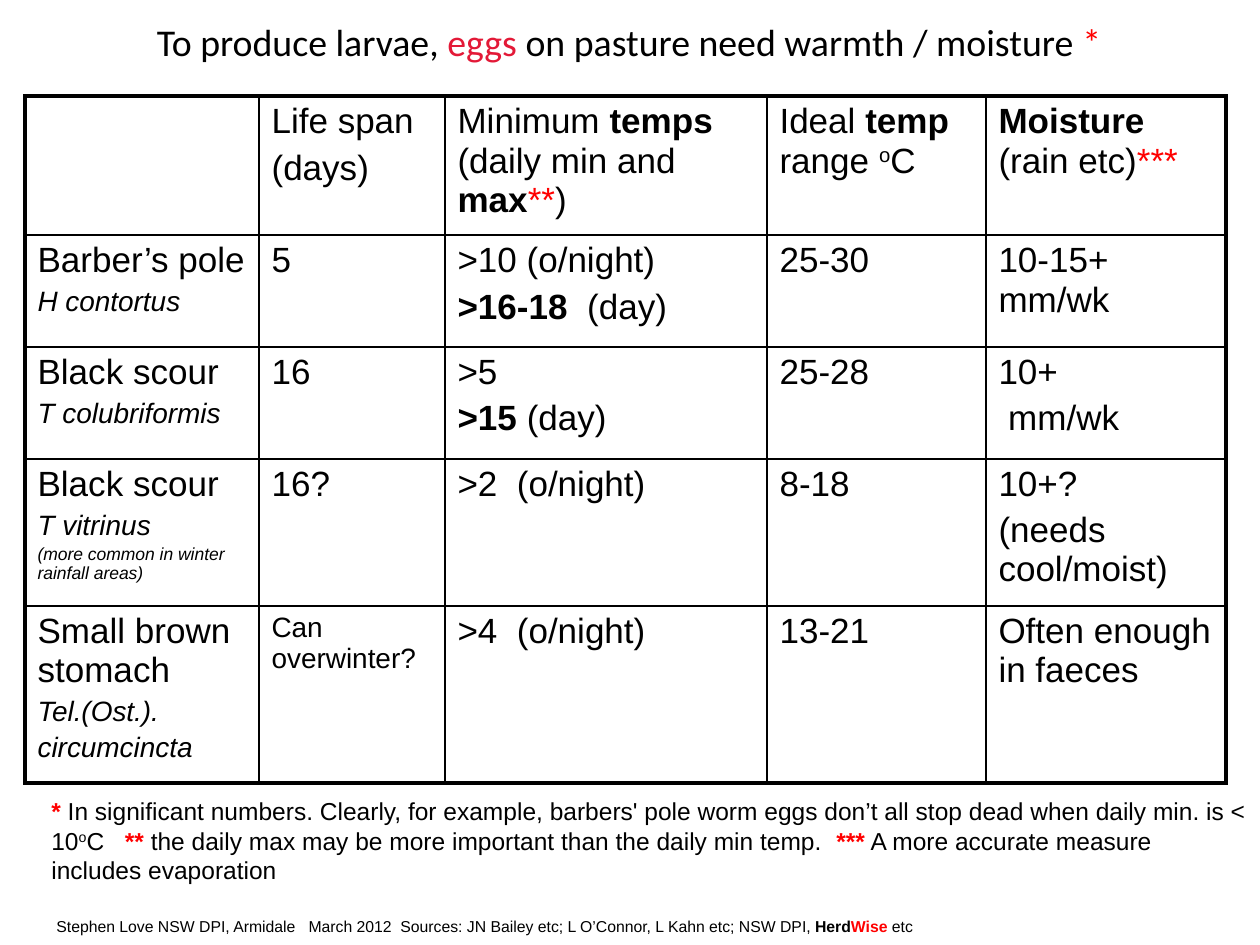
from lxml.etree import SubElement
from pptx import Presentation
from pptx.dml.color import RGBColor
from pptx.enum.text import MSO_ANCHOR as Anchor, PP_ALIGN as Align
from pptx.oxml.ns import qn
from pptx.util import Emu, Pt

EMU_PER_PX = 914400 / 126
BLACK, RED, CRIMSON = "000000", "FF0000", "E31937"

COLUMNS = [234, 186, 322, 219, 240]
ROWS = [139, 112, 112, 147, 177]

# A span is plain text or (text, options); a paragraph is (spans, options).
BOLD = {"bold": True}
RED_TEXT = {"color": RED}
RED_BOLD = {"color": RED, "bold": True}
RAISED = {"raised": True}
LATIN = {"size": 16, "italic": True}
SMALL = {"size": 16}
NOTE = {"size": 10, "italic": True}

TITLE = ["To produce larvae, ", ("eggs", {"color": CRIMSON}),
         " on pasture need warmth / moisture ", ("*", RED_TEXT)]

# Each cell is a list of paragraphs
TABLE = [
    [[],
     [(["Life span"], {}), (["(days)"], {})],
     [(["Minimum ", ("temps", BOLD), " (daily min and ", ("max", BOLD),
        ("**", RED_TEXT), ")"], {})],
     [(["Ideal ", ("temp", BOLD), " range ", ("o", RAISED), "C"], {})],
     [([("Moisture ", BOLD), "(rain etc)", ("***", RED_TEXT)], {})]],
    [[(["Barber’s pole"], {}), (["H contortus"], LATIN)],
     [(["5"], {})],
     [([">10 (o/night)"], {}), ([(">16-18", BOLD), "  (day)"], {})],
     [(["25-30"], {})],
     [(["10-15+ mm/wk"], {})]],
    [[(["Black scour"], {}), (["T colubriformis"], LATIN)],
     [(["16"], {})],
     [([">5"], {}), ([(">15 ", BOLD), "(day)"], {})],
     [(["25-28"], {})],
     [(["10+"], {}), ([" mm/wk"], {})]],
    [[(["Black scour"], {}), (["T vitrinus"], LATIN),
      (["(more common in winter rainfall areas)"], NOTE)],
     [(["16?"], {})],
     [([">2  (o/night)"], {})],
     [(["8-18"], {})],
     [(["10+?"], {}), (["(needs cool/moist)"], {})]],
    [[(["Small brown stomach"], {}), (["Tel.(Ost.)."], LATIN),
      (["circumcincta"], LATIN)],
     [(["Can overwinter?"], SMALL)],
     [([">4  (o/night)"], {})],
     [(["13-21"], {})],
     [(["Often enough in faeces"], {})]],
]

FOOTNOTES = [
    ("* ", RED_BOLD),
    "In significant numbers. Clearly, for example, barbers' pole worm eggs "
    "don’t all stop dead when daily min. is < 10",
    ("o", RAISED), "C   ", ("**", RED_BOLD),
    " the daily max may be more important than the daily min temp.  ",
    ("***", RED_BOLD), " A more accurate measure includes evaporation"]

SOURCES = [
    "Stephen Love NSW DPI, Armidale   March 2012", (" ", {"size": 18}),
    "Sources: JN Bailey etc; L O’Connor, L Kahn etc; NSW DPI,",
    (" Herd", BOLD), ("Wise ", RED_BOLD), "etc"]


def px(length):
    return Emu(round(length * EMU_PER_PX))


def rgb(value):
    return RGBColor.from_string(value)


def fill_paragraph(para, spans, size=20, font="Arial", italic=False):
    para.font.name = font
    para.font.size = Pt(size)
    para.font.italic = italic
    for item in spans:
        text, options = (item, {}) if isinstance(item, str) else item
        span = para.add_run()
        span.text = text
        span.font.color.rgb = rgb(options.get("color", BLACK))
        if "bold" in options:
            span.font.bold = True
        if "size" in options:
            span.font.size = Pt(options["size"])
        if "raised" in options:
            span.font._element.set("baseline", "30000")


def add_text(page, left, top, width, height, spans, size, font="Arial",
             align=Align.LEFT, anchor=Anchor.TOP):
    box = page.shapes.add_textbox(px(left), px(top), px(width), px(height))
    frame = box.text_frame
    frame.word_wrap = True
    frame.vertical_anchor = anchor
    para = frame.paragraphs[0]
    para.alignment = align
    fill_paragraph(para, spans, size, font)


def set_borders(cell, widths):
    """Draw black borders; widths maps a side (L, R, T, B) to points."""
    properties = cell._tc.get_or_add_tcPr()
    for index, (side, width) in enumerate(widths.items()):
        line = SubElement(properties, qn(f"a:ln{side}"), w=str(Pt(width)))
        fill = SubElement(line, qn("a:solidFill"))
        SubElement(fill, qn("a:srgbClr"), val=BLACK)
        properties.insert(index, line)  # borders come before the fill


def fill_cell(cell, paragraphs):
    cell.fill.background()
    frame = cell.text_frame
    for index, (spans, options) in enumerate(paragraphs):
        para = frame.add_paragraph() if index else frame.paragraphs[0]
        para.space_before = Pt(0.2 * options.get("size", 20))
        fill_paragraph(para, spans, **options)


def add_worm_table(page, left, top):
    table = page.shapes.add_table(
        len(ROWS), len(COLUMNS), px(left), px(top),
        px(sum(COLUMNS)), px(sum(ROWS))).table
    table.first_row = table.horz_banding = False
    for column, width in zip(table.columns, COLUMNS):
        column.width = px(width)
    for row, height in zip(table.rows, ROWS):
        row.height = px(height)

    last_row, last_column = len(ROWS) - 1, len(COLUMNS) - 1
    for r, row in enumerate(TABLE):
        for c, paragraphs in enumerate(row):
            cell = table.cell(r, c)
            fill_cell(cell, paragraphs)
            outer = {"L": c == 0, "R": c == last_column,
                     "T": r == 0, "B": r == last_row}
            set_borders(cell, {side: 2.25 if edge else 1
                               for side, edge in outer.items()})


def main():
    deck = Presentation()
    deck.slide_width, deck.slide_height = px(1260), px(945)
    page = deck.slides.add_slide(deck.slide_layouts[6])

    # Title
    add_text(page, 44, 16, 1170, 50, TITLE, 21.6, "Calibri",
             Align.CENTER, Anchor.MIDDLE)
    # Worm egg conditions
    add_worm_table(page, 25, 96)
    # Sources and footnotes
    add_text(page, 44, 895, 902, 50, SOURCES, 9)
    add_text(page, 39, 790, 1221, 102, FOOTNOTES, 14)

    deck.save("out.pptx")


if __name__ == "__main__":
    main()
